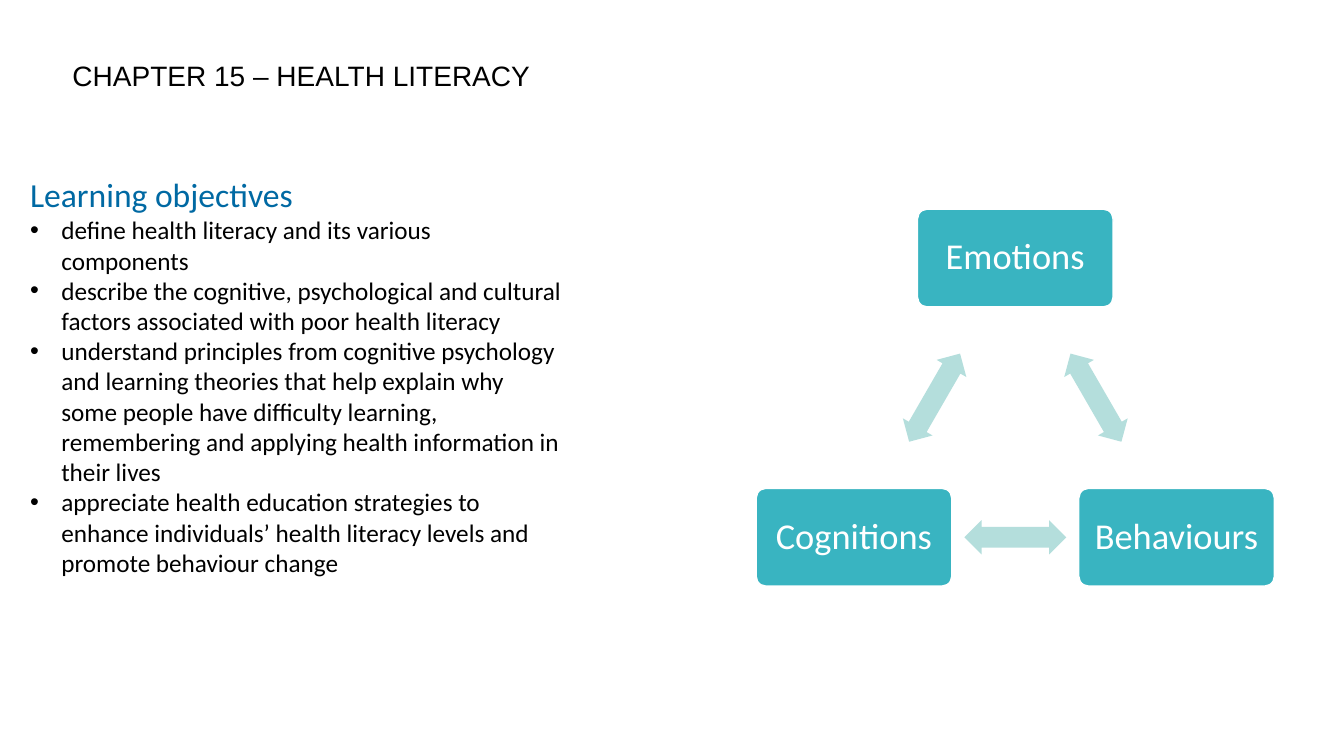
from lxml import etree
from pptx import Presentation
from pptx.dml.color import RGBColor
from pptx.enum.shapes import MSO_SHAPE
from pptx.enum.text import MSO_ANCHOR, PP_ALIGN
from pptx.oxml.ns import qn
from pptx.util import Inches, Pt

ROUND = MSO_SHAPE.ROUNDED_RECTANGLE
ARROW = MSO_SHAPE.LEFT_RIGHT_ARROW
MIDDLE = MSO_ANCHOR.MIDDLE
CENTER = PP_ALIGN.CENTER

COLORS = {
    "black": "000000",
    "white": "FFFFFF",
    "blue": "0069A3",
    "teal": "39B4C1",
    "pale": "B4DEDC",
}

GOALS = [
    "define health literacy and its various components",
    "describe the cognitive, psychological and cultural factors associated "
    "with poor health literacy",
    "understand principles from cognitive psychology and learning theories "
    "that help explain why some people have difficulty learning, remembering "
    "and applying health information in their lives",
    "appreciate health education strategies to enhance individuals’ health "
    "literacy levels and promote behaviour change",
]


def add_run(para, text, size, color, font="Calibri"):
    run = para.add_run()
    run.text = text
    run.font.size = Pt(size)
    run.font.name = font
    run.font.color.rgb = RGBColor.from_string(COLORS[color])


def add_shape(kind, mid_x, mid_y, width, height, fill):
    """Add a plain filled shape around its centre, given in inches."""
    shape = slide.shapes.add_shape(
        kind, Inches(mid_x - width / 2), Inches(mid_y - height / 2),
        Inches(width), Inches(height))
    shape.shadow.inherit = False
    shape.fill.solid()
    shape.fill.fore_color.rgb = RGBColor.from_string(COLORS[fill])
    shape.line.fill.background()
    return shape


prs = Presentation()
prs.slide_width = Inches(13.33)
prs.slide_height = Inches(7.5)
slide = prs.slides.add_slide(prs.slide_layouts[6])

# Learning objectives
box = slide.shapes.add_textbox(Inches(0.2), Inches(1.68), Inches(5.48), Inches(4.14))
frame = box.text_frame
frame.word_wrap = True
add_run(frame.paragraphs[0], "Learning objectives", 24, "blue")
for goal in GOALS:
    para = frame.add_paragraph()
    props = para._p.get_or_add_pPr()
    props.set("marL", str(Inches(0.31)))
    props.set("indent", str(Inches(-0.31)))
    etree.SubElement(props, qn("a:buFont")).set("typeface", "Arial")
    etree.SubElement(props, qn("a:buChar")).set("char", "•")
    add_run(para, goal, 18, "black")

# Chapter title
box = slide.shapes.add_textbox(Inches(0.62), Inches(0.53), Inches(12.46), Inches(0.44))
box.text_frame.word_wrap = True
add_run(box.text_frame.paragraphs[0], "CHAPTER 15 – HEALTH LITERACY", 20, "black", "Arial")

# Triangle of linked boxes
MID, STEP = 10.07, 1.6
TOP, LOW = 2.56, 5.33
NODES = [
    ("Emotions", MID, TOP),
    ("Behaviours", MID + STEP, LOW),
    ("Cognitions", MID - STEP, LOW),
]
for label, x, y in NODES:
    node = add_shape(ROUND, x, y, 1.94, 0.97, "teal")
    node.adjustments[0] = 0.1
    node.line.color.rgb = RGBColor.from_string(COLORS["white"])
    node.line.width = Pt(1)
    frame = node.text_frame
    frame.word_wrap = True
    frame.vertical_anchor = MIDDLE
    frame.margin_left = frame.margin_right = Inches(0.1)
    para = frame.paragraphs[0]
    para.alignment = CENTER
    para.line_spacing = 0.9
    add_run(para, label, 26, "white")

# Each arrow sits halfway between two neighbouring boxes
for i, turn in enumerate((60, 180, 300)):
    _, x1, y1 = NODES[i]
    _, x2, y2 = NODES[(i + 1) % 3]
    arrow = add_shape(ARROW, (x1 + x2) / 2, (y1 + y2) / 2, 1.01, 0.34, "pale")
    arrow.adjustments[0] = 0.6
    arrow.adjustments[1] = 0.5
    arrow.rotation = turn

prs.save("out.pptx")
